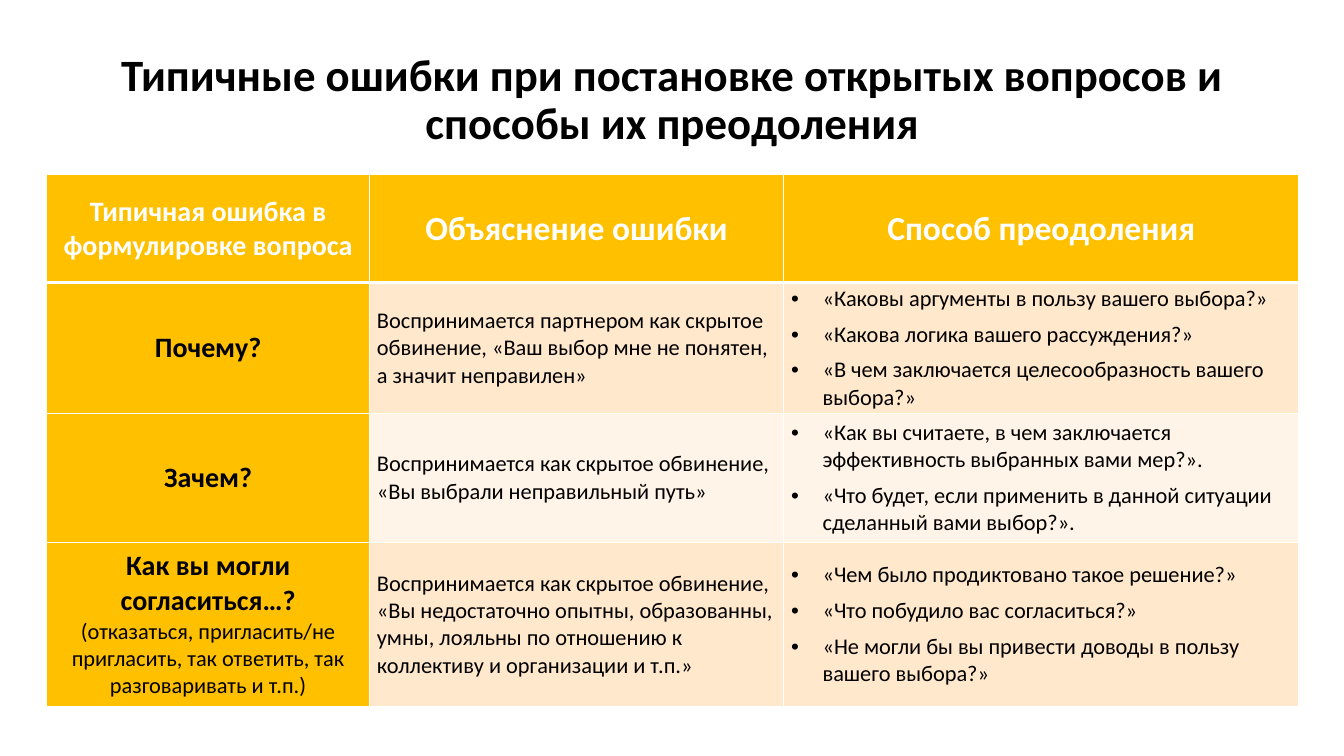
from lxml import etree
from pptx import Presentation, util as u
from pptx.dml.color import RGBColor
from pptx.enum import text
from pptx.oxml.ns import qn

# Content
TITLE = "Типичные ошибки при постановке открытых вопросов и способы их преодоления"
HEADERS = [
    ("Типичная ошибка в формулировке вопроса", 20),
    ("Объяснение ошибки", 24),
    ("Способ преодоления", 24),
]
# Question, note under it, explanation, remedies
ROWS = [
    ("Почему?", "",
     "Воспринимается партнером как скрытое обвинение, «Ваш выбор мне не понятен, "
     "а значит неправилен»",
     ["«Каковы аргументы в пользу вашего выбора?»",
      "«Какова логика вашего рассуждения?»",
      "«В чем заключается целесообразность вашего выбора?»"]),
    ("Зачем?", "",
     "Воспринимается как скрытое обвинение, «Вы выбрали неправильный путь»",
     ["«Как вы считаете, в чем заключается эффективность выбранных вами мер?».",
      "«Что будет, если применить в данной ситуации сделанный вами выбор?»."]),
    ("Как вы могли согласиться…?",
     "(отказаться, пригласить/не пригласить, так ответить, так разговаривать и т.п.)",
     "Воспринимается как скрытое обвинение, «Вы недостаточно опытны, образованны, "
     "умны, лояльны по отношению к коллективу и организации и т.п.»",
     ["«Чем было продиктовано такое решение?»",
      "«Что побудило вас согласиться?»",
      "«Не могли бы вы привести доводы в пользу вашего выбора?»"]),
]
COL_W = [8.13, 10.44, 12.98]
ROW_H = [2.72, 3.3, 3.25, 4.14]
COLORS = {"text": "000000", "white": "FFFFFF", "accent": "FFC000",
          "band1": "FFE8CC", "band2": "FFF4E7"}
FONT = "Calibri"
CENTER, LEFT = text.PP_ALIGN.CENTER, text.PP_ALIGN.LEFT


def add_run(p, words, size, bold=False, color="text", align=LEFT):
    p.alignment = align
    r = p.add_run()
    r.text = words
    r.font.name, r.font.size, r.font.bold = FONT, u.Pt(size), bold
    r.font.color.rgb = RGBColor.from_string(COLORS[color])


def add_bullet(p):
    pPr = p._p.get_or_add_pPr()
    pPr.set("marL", str(u.Cm(0.79)))
    pPr.set("indent", str(-u.Cm(0.79)))
    etree.SubElement(pPr, qn("a:buFont")).set("typeface", "Arial")
    etree.SubElement(pPr, qn("a:buChar")).set("char", "•")


def style_cell(cell, fill, bottom=1):
    cell.vertical_anchor = text.MSO_ANCHOR.MIDDLE
    cell.margin_left = cell.margin_right = u.Cm(0.19)
    cell.margin_top = cell.margin_bottom = 0
    cell.fill.solid()
    cell.fill.fore_color.rgb = RGBColor.from_string(COLORS[fill])
    tcPr = cell._tc.get_or_add_tcPr()
    for i, (side, width) in enumerate(zip("LRTB", (1, 1, 1, bottom))):
        ln = etree.Element(qn("a:ln" + side), w=str(u.Pt(width)))
        paint = etree.SubElement(ln, qn("a:solidFill"))
        etree.SubElement(paint, qn("a:srgbClr")).set("val", COLORS["white"])
        tcPr.insert(i, ln)


prs = Presentation()
prs.slide_width, prs.slide_height = u.Cm(33.87), u.Cm(19.05)
s = prs.slides.add_slide(prs.slide_layouts[6])

# Title
tf = s.shapes.add_textbox(u.Cm(2.34), u.Cm(1.27), u.Cm(29.21), u.Cm(2.54)).text_frame
tf.word_wrap = True
tf.vertical_anchor = text.MSO_ANCHOR.MIDDLE
tf.paragraphs[0].line_spacing = 0.9
add_run(tf.paragraphs[0], TITLE, 32, True, align=CENTER)

# Table grid
table = s.shapes.add_table(len(ROW_H), len(COL_W), u.Cm(1.18), u.Cm(4.4),
                           u.Cm(sum(COL_W)), u.Cm(sum(ROW_H))).table
for col, width in zip(table.columns, COL_W):
    col.width = u.Cm(width)
for row, height in zip(table.rows, ROW_H):
    row.height = u.Cm(height)

# Header row
for c, (words, size) in enumerate(HEADERS):
    cell = table.cell(0, c)
    style_cell(cell, "accent", bottom=3)
    add_run(cell.text_frame.paragraphs[0], words, size, True, "white", CENTER)

# Body rows
for n, (question, note, why, remedies) in enumerate(ROWS, 1):
    band = "band1" if n % 2 else "band2"
    cells = [table.cell(n, c) for c in range(len(COL_W))]
    for cell, fill in zip(cells, ("accent", band, band)):
        style_cell(cell, fill, bottom=1)
    q_tf, why_tf, remedy_tf = [cell.text_frame for cell in cells]
    add_run(q_tf.paragraphs[0], question, 20, True, align=CENTER)
    if note:
        add_run(q_tf.add_paragraph(), note, 16, align=CENTER)
    add_run(why_tf.paragraphs[0], why, 16)
    for i, remedy in enumerate(remedies):
        p = remedy_tf.add_paragraph() if i else remedy_tf.paragraphs[0]
        p.space_before = u.Pt(6 if i else 0)
        add_bullet(p)
        add_run(p, remedy, 16)

prs.save("out.pptx")
